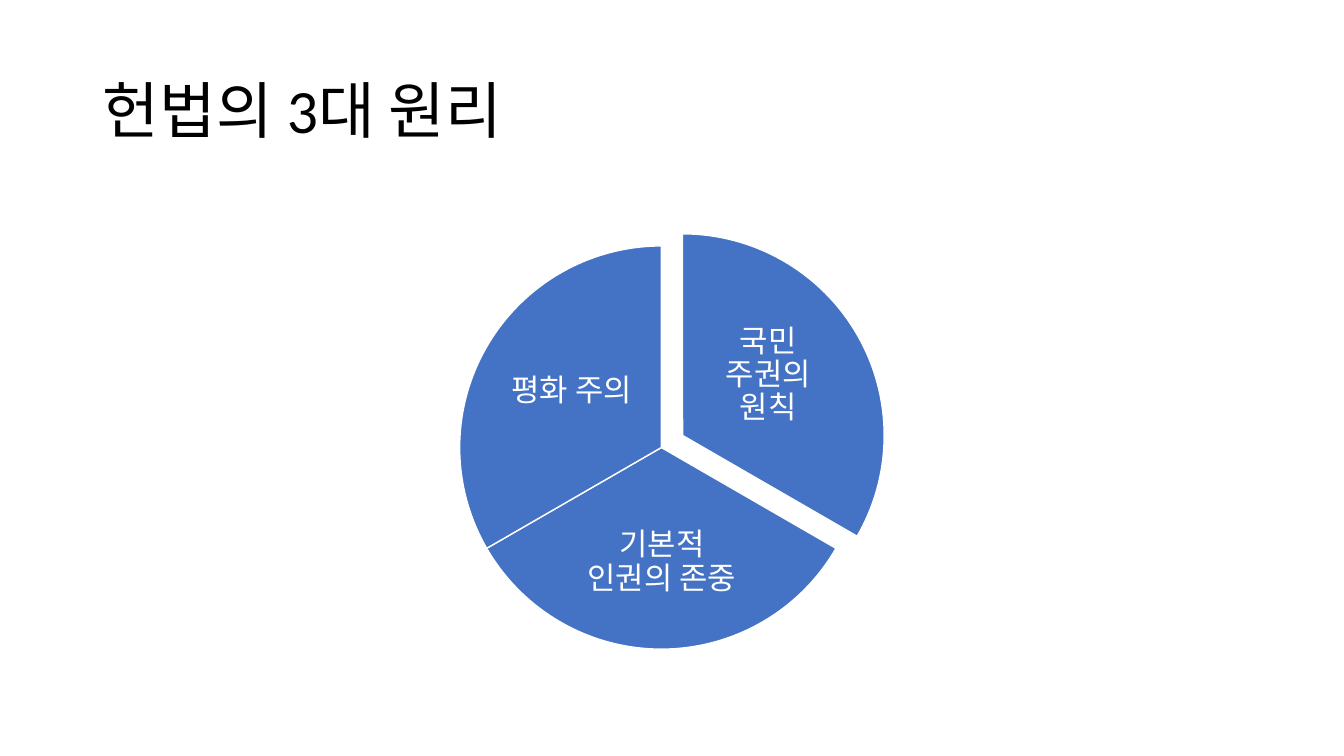
from pptx import Presentation
from pptx.dml.color import RGBColor
from pptx.enum.shapes import MSO_SHAPE
from pptx.enum.text import MSO_ANCHOR, MSO_AUTO_SIZE, PP_ALIGN
from pptx.util import Inches, Pt

BLACK = RGBColor(0x00, 0x00, 0x00)
WHITE = RGBColor(0xFF, 0xFF, 0xFF)
BLUE = RGBColor(0x44, 0x72, 0xC4)
PIE = MSO_SHAPE.PIE
MIDDLE = MSO_ANCHOR.MIDDLE
NO_FIT = MSO_AUTO_SIZE.NONE
LEFT, CENTER = PP_ALIGN.LEFT, PP_ALIGN.CENTER

PIE_SIZE = 4
FIRST_ANGLE = 270
ADJ_PER_DEGREE = 0.6  # pie angles are stored in 60000ths, adjustments in 100000ths


def write(sp, text, size, color, align, inset_x, inset_y):
    tf = sp.text_frame
    tf.word_wrap = True
    tf.auto_size = NO_FIT
    tf.vertical_anchor = MIDDLE
    tf.margin_left = tf.margin_right = Inches(inset_x)
    tf.margin_top = tf.margin_bottom = Inches(inset_y)
    p = tf.paragraphs[0]
    p.alignment = align
    p.line_spacing = 0.9
    r = p.add_run()
    r.text = text
    r.font.name = "Calibri"
    r.font.size = Pt(size)
    r.font.color.rgb = color


prs = Presentation()
prs.slide_width, prs.slide_height = Inches(13.33), Inches(7.5)
s = prs.slides.add_slide(prs.slide_layouts[5])

title = s.shapes.title
title.left, title.top = Inches(0.92), Inches(0.4)
title.width, title.height = Inches(11.5), Inches(1.45)
write(title, "헌법의 3대 원리", size=44, color=BLACK, align=LEFT,
      inset_x=0.1, inset_y=0.05)

# Wedge position, label box, label; wedges run clockwise from the top
principles = [
    ((4.77, 2.32), (6.94, 3.06, 1.36, 1.33), "국민 주권의 원칙"),
    ((4.56, 2.44), (5.66, 4.96, 1.81, 1.24), "기본적 인권의 존중"),
    ((4.56, 2.44), (4.99, 3.22, 1.36, 1.33), "평화 주의"),
]
sweep = 360 / len(principles)
diagram = s.shapes.add_group_shape()

for i, (position, label_box, label) in enumerate(principles):
    x, y = position
    wedge = diagram.shapes.add_shape(
        PIE, Inches(x), Inches(y), Inches(PIE_SIZE), Inches(PIE_SIZE))
    start = FIRST_ANGLE + i * sweep
    wedge.adjustments[0] = start % 360 * ADJ_PER_DEGREE
    wedge.adjustments[1] = (start + sweep) % 360 * ADJ_PER_DEGREE
    wedge.shadow.inherit = False
    wedge.fill.solid()
    wedge.fill.fore_color.rgb = BLUE
    wedge.line.color.rgb = WHITE
    wedge.line.width = Pt(1)

    box = diagram.shapes.add_textbox(*map(Inches, label_box))
    write(box, label, size=22, color=WHITE, align=CENTER,
          inset_x=0.03, inset_y=0.03)

prs.save("out.pptx")
